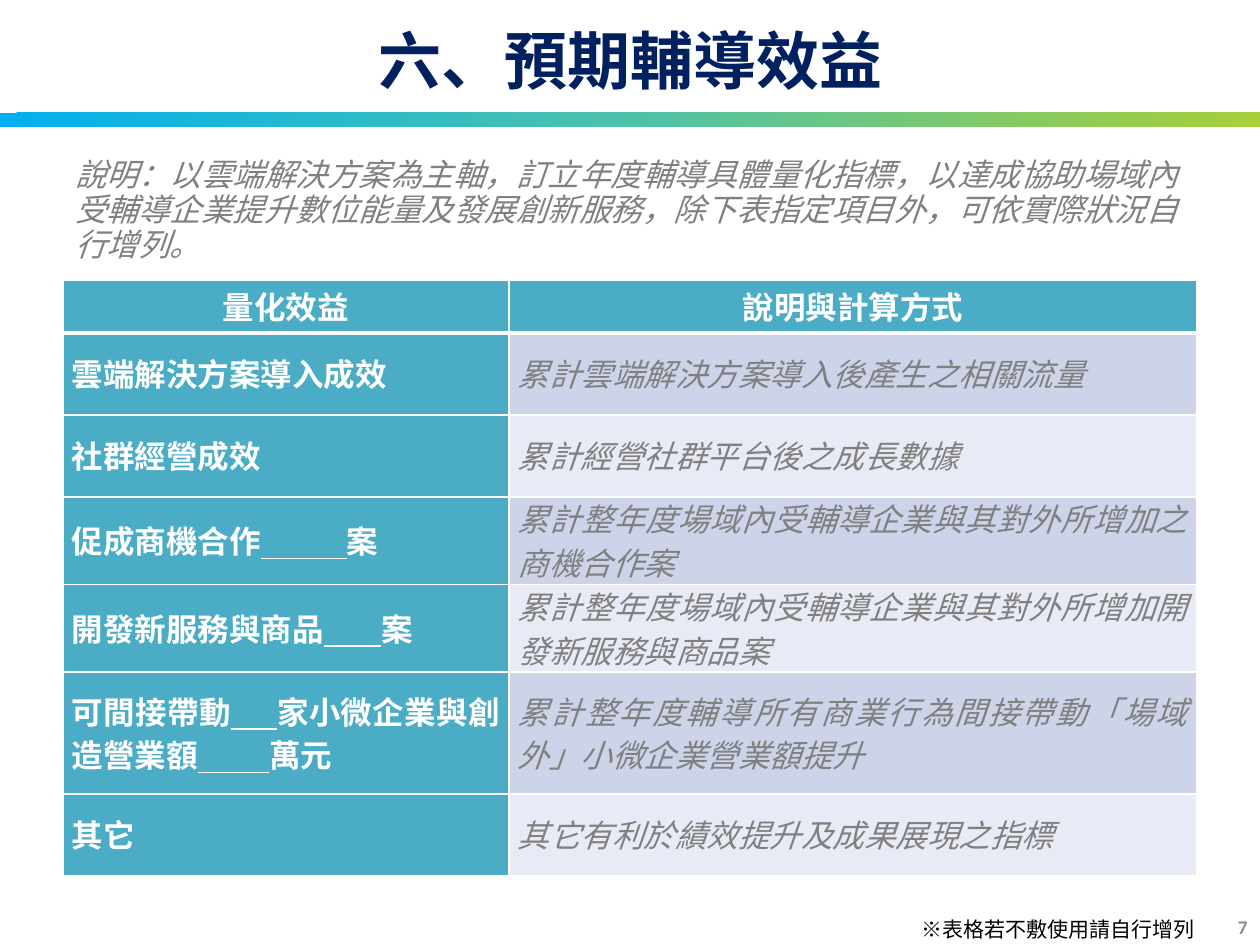
from lxml import etree
from pptx import Presentation
from pptx.dml.color import RGBColor
from pptx.enum.shapes import MSO_SHAPE
from pptx.enum.text import MSO_ANCHOR, MSO_AUTO_SIZE, PP_ALIGN
from pptx.oxml import parse_xml
from pptx.oxml.ns import nsdecls, qn
from pptx.util import Pt

LEFT, CENTER, RIGHT, JUSTIFY = PP_ALIGN.LEFT, PP_ALIGN.CENTER, PP_ALIGN.RIGHT, PP_ALIGN.JUSTIFY
MIDDLE, TOP = MSO_ANCHOR.MIDDLE, MSO_ANCHOR.TOP
RECTANGLE = MSO_SHAPE.RECTANGLE
NO_AUTOFIT = MSO_AUTO_SIZE.NONE

CJK = "Noto Sans CJK SC"
COLORS = {
    "title": "002060", "teal": "4BACC6", "white": "FFFFFF", "gray": "808080",
    "odd": "CDD4EA", "even": "E8EBF5", "number": "8C8C8C", "black": "000000",
}
GRADIENT = [(0, "00B0F0"), (48, "49C1AD"), (100, "A8CF38")]
GRADIENT_ANGLE = 18

TITLE = "六、預期輔導效益"
INTRO = ("說明：以雲端解決方案為主軸，訂立年度輔導具體量化指標，以達成協助場域內受輔導企業"
         "提升數位能量及發展創新服務，除下表指定項目外，可依實際狀況自行增列。")
FOOTNOTE = "※表格若不敷使用請自行增列"
PAGE_NUMBER = "7"
HEADER = ("量化效益", "說明與計算方式")
# An integer in a label is the width, in spaces, of an underlined fill-in blank.
ROWS = [
    (["雲端解決方案導入成效"], "累計雲端解決方案導入後產生之相關流量"),
    (["社群經營成效"], "累計經營社群平台後之成長數據"),
    (["促成商機合作", 12, "案"], "累計整年度場域內受輔導企業與其對外所增加之商機合作案"),
    (["開發新服務與商品", 8, "案"], "累計整年度場域內受輔導企業與其對外所增加開發新服務與商品案"),
    (["可間接帶動", 6, "家小微企業與創造營業額", 10, "萬元 "],
     "累計整年度輔導所有商業行為間接帶動「場域外」小微企業營業額提升"),
    (["其它"], "其它有利於績效提升及成果展現之指標"),
]
COLUMN_WIDTHS = [446, 688]
ROW_HEIGHTS = [53, 82, 82, 82, 82, 122, 82]
CELL_INSET = 9


def px(value):
    return round(value * 914400 / 126)


def format_run(run, size, color, bold=False, italic=False, underline=None, name=CJK):
    font = run.font
    font.size, font.bold, font.italic, font.underline = Pt(size), bold, italic, underline
    font.color.rgb = RGBColor.from_string(COLORS[color])
    font.name = name
    etree.SubElement(run._r.get_or_add_rPr(), qn("a:ea")).set("typeface", name)


def write(frame, text, align, anchor, spacing=None, **style):
    frame.word_wrap = True
    frame.vertical_anchor = anchor
    frame.text = text
    paragraph = frame.paragraphs[0]
    paragraph.alignment = align
    paragraph.line_spacing = spacing
    format_run(paragraph.runs[0], **style)


def add_text(slide, box, *args, **style):
    write(slide.shapes.add_textbox(*map(px, box)).text_frame, *args, **style)


def add_band(slide):
    band = slide.shapes.add_shape(RECTANGLE, *map(px, (0, 113, 1260, 14)))
    band.shadow.inherit = False
    band.line.fill.background()
    stops = "".join(f'<a:gs pos="{position * 1000}"><a:srgbClr val="{color}"/></a:gs>'
                    for position, color in GRADIENT)
    band._element.spPr.find(qn("a:prstGeom")).addnext(parse_xml(
        f'<a:gradFill {nsdecls("a")}><a:gsLst>{stops}</a:gsLst>'
        f'<a:lin ang="{GRADIENT_ANGLE * 60000}" scaled="1"/></a:gradFill>'))


def style_cell(cell, fill, top, bottom):
    cell.margin_left = cell.margin_right = px(CELL_INSET)
    cell.margin_top = cell.margin_bottom = 0
    cell.vertical_anchor = MIDDLE
    cell.fill.solid()
    cell.fill.fore_color.rgb = RGBColor.from_string(COLORS[fill])
    borders = [("lnL", 1), ("lnR", 1), ("lnT", top), ("lnB", bottom)]
    for index, (tag, width) in enumerate(borders):
        cell._tc.get_or_add_tcPr().insert(index, parse_xml(
            f'<a:{tag} {nsdecls("a")} w="{Pt(width)}"><a:solidFill>'
            f'<a:srgbClr val="{COLORS["white"]}"/></a:solidFill></a:{tag}>'))


def fill_cell(cell, parts, align, **style):
    paragraph = cell.text_frame.paragraphs[0]
    paragraph.alignment = align
    paragraph.line_spacing = Pt(25)
    for part in parts:
        blank = isinstance(part, int)
        run = paragraph.add_run()
        run.text = " " * part if blank else part
        format_run(run, 18, underline=blank, **style)


def add_benefit_table(slide):
    box = (63, 280, sum(COLUMN_WIDTHS), sum(ROW_HEIGHTS))
    table = slide.shapes.add_table(len(ROW_HEIGHTS), len(COLUMN_WIDTHS), *map(px, box)).table
    for column, width in zip(table.columns, COLUMN_WIDTHS):
        column.width = px(width)
    for row, height in zip(table.rows, ROW_HEIGHTS):
        row.height = px(height)
    for column, heading in enumerate(HEADER):
        cell = table.cell(0, column)
        style_cell(cell, "teal", 1, 3)
        fill_cell(cell, [heading], CENTER, color="white", bold=True)
    for index, (label, description) in enumerate(ROWS, 1):
        top = 3 if index == 1 else 1
        label_cell, description_cell = table.cell(index, 0), table.cell(index, 1)
        style_cell(label_cell, "teal", top, 1)
        fill_cell(label_cell, label, JUSTIFY, color="white", bold=True)
        style_cell(description_cell, "odd" if index % 2 else "even", top, 1)
        fill_cell(description_cell, [description], JUSTIFY, color="gray", italic=True)


def main():
    presentation = Presentation()
    presentation.slide_width, presentation.slide_height = px(1260), px(945)
    slide = presentation.slides.add_slide(presentation.slide_layouts[5])
    add_band(slide)

    title = slide.shapes.title
    title.left, title.top, title.width, title.height = map(px, (0, 0, 1260, 118))
    write(title.text_frame, TITLE, CENTER, MIDDLE, size=36, color="title", bold=True)
    title.text_frame.auto_size = NO_AUTOFIT

    add_text(slide, (966, 902, 294, 50), PAGE_NUMBER, RIGHT, MIDDLE,
             size=11, color="number", bold=True, name="Calibri")
    add_benefit_table(slide)
    add_text(slide, (63, 152, 1134, 118), INTRO, LEFT, TOP, Pt(20),
             size=18, color="gray", italic=True)
    add_text(slide, (900, 910, 317, 38), FOOTNOTE, CENTER, TOP, size=12, color="black")
    presentation.save("out.pptx")


if __name__ == "__main__":
    main()
